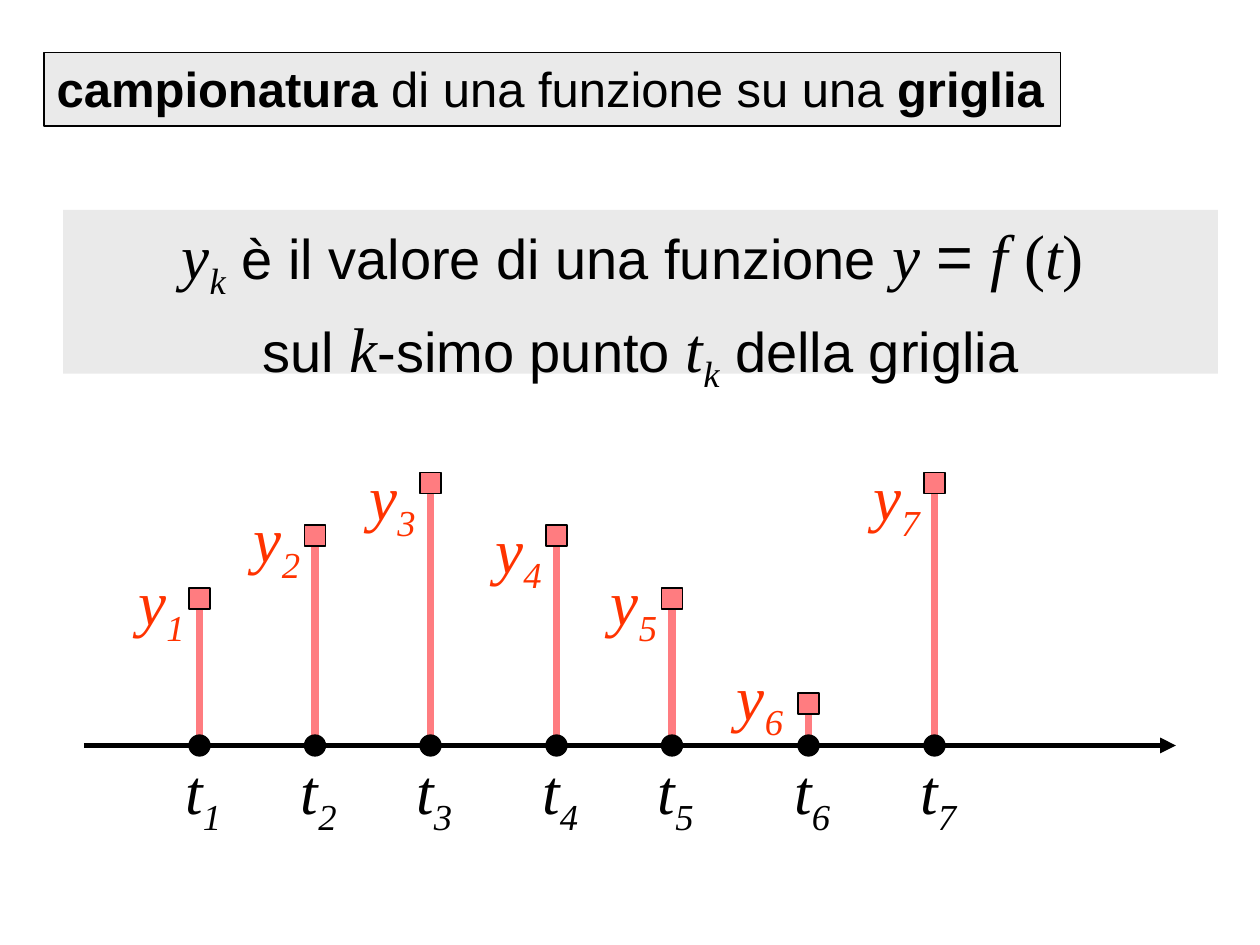
from lxml import etree
from pptx import Presentation
from pptx.dml.color import RGBColor
from pptx.enum import shapes, text
from pptx.oxml import ns
from pptx.util import Pt

COLORS = {"black": "000000", "panel": "EAEAEA", "stem": "FF7C80", "value": "FF3300"}
SANS = dict(font="Arial", size=32)
MATH = dict(font="Times New Roman", size=36)
VAR = dict(MATH, italic=True)
SUB = dict(VAR, sub=True)


def add_run(p, string, font="Arial", size=32, color="black", bold=False, italic=False, sub=False):
    r = p.add_run()
    r.text = string
    r.font.name, r.font.size = font, Pt(size)
    r.font.bold, r.font.italic = bold, italic
    r.font.color.rgb = RGBColor.from_string(COLORS[color])
    if sub:
        r.font._element.set("baseline", "-25000")


def add_line(x1, y1, x2, y2, color, width):
    line = s.shapes.add_connector(shapes.MSO_CONNECTOR.STRAIGHT, Pt(x1), Pt(y1), Pt(x2), Pt(y2))
    line.line.color.rgb = RGBColor.from_string(COLORS[color])
    line.line.width = Pt(width)
    etree.SubElement(line._element.spPr, ns.qn("a:effectLst"))
    return line


prs = Presentation()
prs.slide_width, prs.slide_height = Pt(720), Pt(540)
s = prs.slides.add_slide(prs.slide_layouts[5])

# Title
title = s.shapes.title
title.left, title.top, title.width, title.height = Pt(25.2), Pt(30), Pt(581), Pt(42)
title.fill.solid()
title.fill.fore_color.rgb = RGBColor.from_string(COLORS["panel"])
title.line.color.rgb = RGBColor.from_string(COLORS["black"])
title.line.width = Pt(0.75)
tf = title.text_frame
tf.word_wrap = False
tf.auto_size = text.MSO_AUTO_SIZE.NONE
tf.vertical_anchor = text.MSO_ANCHOR.TOP
p = tf.paragraphs[0]
p.alignment = text.PP_ALIGN.LEFT
for string, bold in [("campionatura ", True), ("di una funzione su una", False), (" griglia", True)]:
    add_run(p, string, size=28, bold=bold)

# Definition panel
panel = s.shapes.add_shape(shapes.MSO_SHAPE.RECTANGLE, Pt(36), Pt(120), Pt(660), Pt(93.6))
panel.shadow.inherit = False
panel.fill.solid()
panel.fill.fore_color.rgb = RGBColor.from_string(COLORS["panel"])
panel.line.fill.background()
tf = panel.text_frame
tf.word_wrap = True
tf.vertical_anchor = text.MSO_ANCHOR.TOP
definition = [
    [("y", VAR), ("k", SUB), (" è il valore di una funzione ", SANS), ("y ", VAR),
     ("= ", dict(SANS, size=36)), ("f ", VAR), ("(", MATH), ("t", VAR), (")", MATH), (" ", SANS)],
    [("sul ", SANS), ("k", VAR), ("-simo punto ", SANS), ("t", VAR), ("k", SUB),
     (" della griglia", SANS)],
]
for i, runs in enumerate(definition):
    p = tf.add_paragraph() if i else tf.paragraphs[0]
    p.alignment = text.PP_ALIGN.CENTER
    p.space_before = Pt(4)
    for string, style in runs:
        add_run(p, string, **style)

# Time axis
AXIS_Y, MARK = 426, 12
axis = add_line(48, AXIS_Y, 672, AXIS_Y, "black", 3)
etree.SubElement(axis.line._get_or_add_ln(), ns.qn("a:tailEnd"), type="triangle")

# Samples: grid point x, value y, left and top of the value label
samples = [(114, 342, 72, 318), (180, 306, 138, 282), (246, 276, 204, 258), (318, 306, 276, 288),
           (384, 342, 342, 318), (462, 402, 414, 372), (534, 276, 492, 258)]
for k, (x, y, label_x, label_y) in enumerate(samples, start=1):
    add_line(x, AXIS_Y - MARK / 2, x, y, "stem", 4.5)

    # Grid point and value marker
    for kind, cy, color in [(shapes.MSO_SHAPE.OVAL, AXIS_Y, "black"),
                            (shapes.MSO_SHAPE.RECTANGLE, y, "stem")]:
        sp = s.shapes.add_shape(kind, Pt(x - MARK / 2), Pt(cy - MARK / 2), Pt(MARK), Pt(MARK))
        sp.shadow.inherit = False
        sp.fill.solid()
        sp.fill.fore_color.rgb = RGBColor.from_string(COLORS[color])
        sp.line.color.rgb = RGBColor.from_string(COLORS["black"])
        sp.line.width = Pt(0.75)

    # Labels
    for name, left, top, width, color in [("t", x - 24, AXIS_Y, 45, "black"),
                                          ("y", label_x, label_y, 42.5, "value")]:
        tf = s.shapes.add_textbox(Pt(left), Pt(top), Pt(width), Pt(50.4)).text_frame
        tf.word_wrap = False
        tf.auto_size = text.MSO_AUTO_SIZE.SHAPE_TO_FIT_TEXT
        p = tf.paragraphs[0]
        if name == "t":
            add_run(p, " ", **SANS)
        add_run(p, name, color=color, **VAR)
        add_run(p, str(k), color=color, **SUB)

prs.save("out.pptx")
